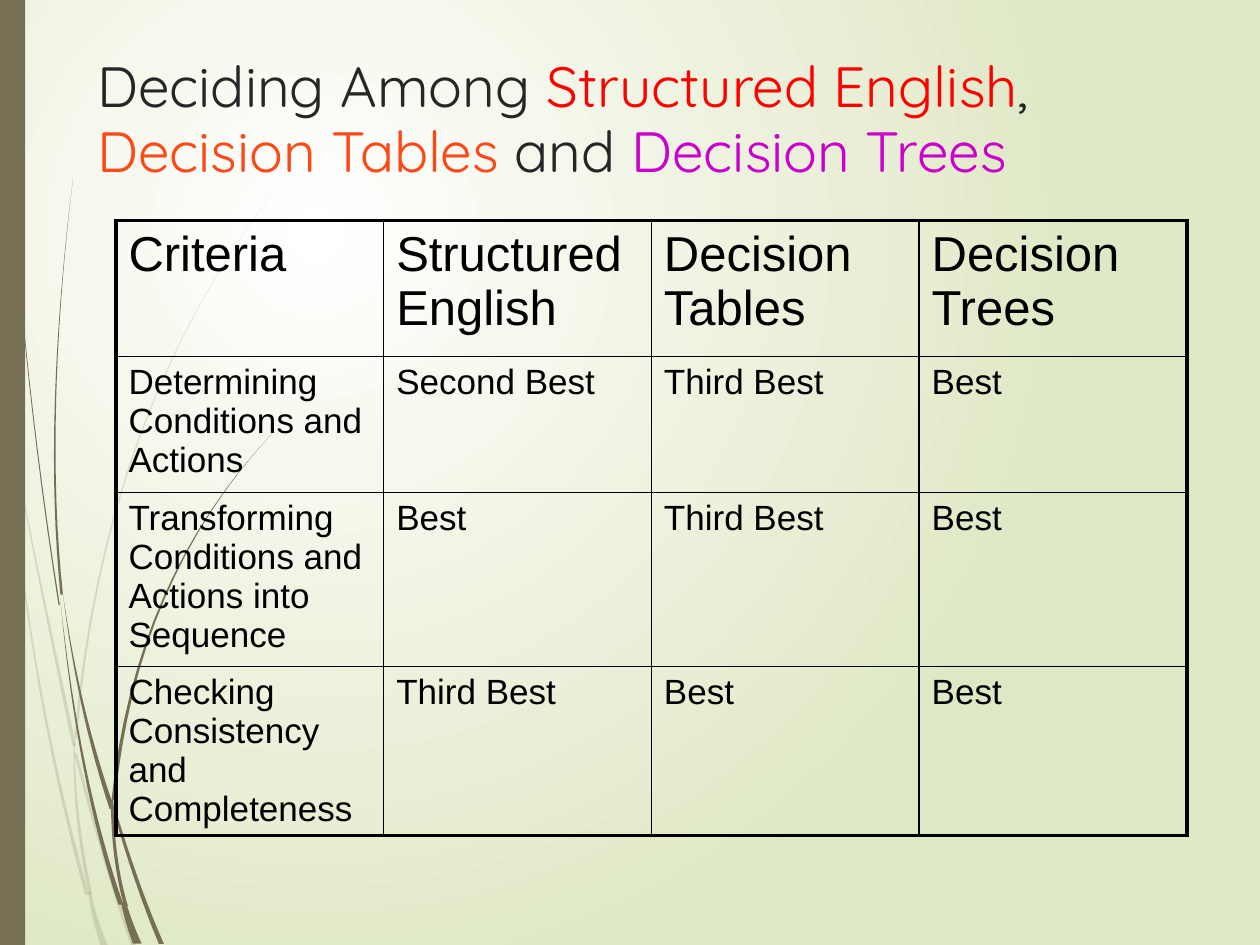
import pptx
import pptx.dml.color
import pptx.enum.shapes
import pptx.enum.text
import pptx.oxml.ns
import pptx.util
from lxml import etree

PX = 9144  # one px is a hundredth of an inch
BLADE_STEPS = 16

RGB = pptx.dml.color.RGBColor
BLACK = RGB(0x00, 0x00, 0x00)
WHITE = RGB(0xFF, 0xFF, 0xFF)
PALE_GREEN = RGB(0xDF, 0xE8, 0xC4)
BROWN = RGB(0x76, 0x6F, 0x54)
CHARCOAL = RGB(0x26, 0x26, 0x26)
RED = RGB(0xFF, 0x00, 0x00)
ORANGE = RGB(0xFB, 0x4A, 0x18)
PURPLE = RGB(0xCC, 0x00, 0xCC)

TITLE_RUNS = [
    ("Deciding Among ", CHARCOAL), ("Structured English", RED), (", ", CHARCOAL),
    ("Decision Tables", ORANGE), (" and ", CHARCOAL), ("Decision Trees", PURPLE),
]

CRITERIA = [
    ("Criteria", "Structured English", "Decision Tables", "Decision Trees"),
    ("Determining Conditions and Actions", "Second Best", "Third Best", "Best"),
    ("Transforming Conditions and Actions into Sequence", "Best", "Third Best", "Best"),
    ("Checking Consistency and Completeness", "Third Best", "Best", "Best"),
]
ROW_HEIGHTS = [108, 108, 138, 99]

# Grass blades: tip, middle, foot, then the widths at tip and foot
PALE_BLADES = [
    ((10, 350), (29, 448), (59, 592), 0, 3),
    ((60, 598), (82, 677), (106, 751), 2, 4),
    ((8, 350), (29, 530), (69, 710), 0, 3),
    ((59, 590), (62, 650), (72, 710), 1, 3),
    ((217, 153), (110, 349), (60, 586), 0, 2),
    ((71, 708), (76, 730), (83, 751), 2, 6),
]
DARK_BLADES = [
    ((3, 0), (17, 240), (47, 480), 0, 1),
    ((50, 472), (66, 561), (89, 642), 0, 4),
    ((90, 640), (108, 697), (128, 749), 2, 4),
    ((48, 477), (67, 608), (96, 718), 0, 4),
    ((58, 141), (44, 320), (49, 472), 0, 2),
    ((216, 344), (130, 475), (90, 635), 0, 3),
    ((89, 635), (92, 680), (100, 719), 2, 3),
    ((98, 716), (103, 733), (109, 749), 4, 7),
]


def add_xml(parent, tag, **attributes):
    return etree.SubElement(parent, pptx.oxml.ns.qn(tag), **attributes)


def paint_background(slide):
    fill = slide.background.fill
    fill.gradient()
    for stop, color in zip(fill.gradient_stops, (WHITE, PALE_GREEN)):
        stop.color.rgb = color
    gradient = slide.element.find(".//" + pptx.oxml.ns.qn("a:gradFill"))
    gradient.remove(gradient.find(pptx.oxml.ns.qn("a:lin")))
    circle = add_xml(gradient, "a:path", path="circle")
    add_xml(circle, "a:fillToRect", l="50000", t="50000", r="100000", b="100000")


def paint_shape(shape, color, opacity=100):
    shape.shadow.inherit = False
    shape.fill.solid()
    shape.fill.fore_color.rgb = color
    shape.line.fill.background()
    if opacity < 100:
        color_xml = shape.element.spPr.find(".//" + pptx.oxml.ns.qn("a:srgbClr"))
        add_xml(color_xml, "a:alpha", val=str(opacity * 1000))


def add_blade(slide, tip, middle, foot, tip_width, foot_width, opacity):
    """Draw a tapered blade along the parabola through tip, middle and foot."""
    left_edge, right_edge = [], []
    for step in range(BLADE_STEPS + 1):
        t = step / BLADE_STEPS
        x, y = (
            a * (1 - t) * (1 - 2 * t) + b * 4 * t * (1 - t) + c * t * (2 * t - 1)
            for a, b, c in zip(tip, middle, foot)
        )
        half = (tip_width + (foot_width - tip_width) * t) / 2
        left_edge.append((round((x - half) * PX), round(y * PX)))
        right_edge.append((round((x + half) * PX), round(y * PX)))
    builder = slide.shapes.build_freeform(*left_edge[0])
    builder.add_line_segments(left_edge[1:] + right_edge[::-1], close=True)
    paint_shape(builder.convert_to_shape(), BROWN, opacity)


def set_title(slide):
    title = slide.shapes.title
    title.left, title.top, title.width, title.height = (n * PX for n in (67, 33, 850, 125))
    frame = title.text_frame
    frame.word_wrap = True
    frame.auto_size = pptx.enum.text.MSO_AUTO_SIZE.NONE
    frame.vertical_anchor = pptx.enum.text.MSO_ANCHOR.MIDDLE
    heading = frame.paragraphs[0]
    heading.alignment = pptx.enum.text.PP_ALIGN.LEFT
    heading.line_spacing = 0.96
    for text, color in TITLE_RUNS:
        run = heading.add_run()
        run.text = text
        run.font.name = "Quicksand"
        run.font.size = pptx.util.Pt(32.4)
        run.font.color.rgb = color


def format_cell(cell, text, size, border_widths):
    cell.text = text
    paragraph = cell.text_frame.paragraphs[0]
    spacing = add_xml(paragraph._p.get_or_add_pPr(), "a:spcBef")
    add_xml(spacing, "a:spcPct", val="20000")
    font = paragraph.runs[0].font
    font.name, font.size, font.bold = "Arial", pptx.util.Pt(size), False
    font.color.rgb = BLACK
    for side, width in zip("LRTB", border_widths):
        border = add_xml(cell._tc.get_or_add_tcPr(), "a:ln" + side, w=str(pptx.util.Pt(width)))
        add_xml(add_xml(border, "a:solidFill"), "a:srgbClr", val=str(BLACK))
    cell.fill.background()


def add_criteria_table(slide):
    rows, columns = len(CRITERIA), len(CRITERIA[0])
    table = slide.shapes.add_table(
        rows, columns, 92 * PX, 175 * PX, 850 * PX, sum(ROW_HEIGHTS) * PX).table
    table.first_row = table.horz_banding = False
    for r, texts in enumerate(CRITERIA):
        table.rows[r].height = ROW_HEIGHTS[r] * PX
        for c, text in enumerate(texts):
            outer = (c == 0, c == columns - 1, r == 0, r == rows - 1)
            widths = [2.25 if edge else 1 for edge in outer]
            format_cell(table.cell(r, c), text, 28 if r == 0 else 20, widths)


def main():
    deck = pptx.Presentation()
    deck.slide_width, deck.slide_height = 1000 * PX, 750 * PX
    slide = deck.slides.add_slide(deck.slide_layouts[5])
    paint_background(slide)
    # Grass and side bar
    for blades, opacity in ((PALE_BLADES, 20), (DARK_BLADES, 100)):
        for blade in blades:
            add_blade(slide, *blade, opacity)
    side_bar = slide.shapes.add_shape(
        pptx.enum.shapes.MSO_SHAPE.RECTANGLE, 0, 0, 20 * PX, 750 * PX)
    paint_shape(side_bar, BROWN)
    # Content
    set_title(slide)
    add_criteria_table(slide)
    deck.save("out.pptx")


if __name__ == "__main__":
    main()
